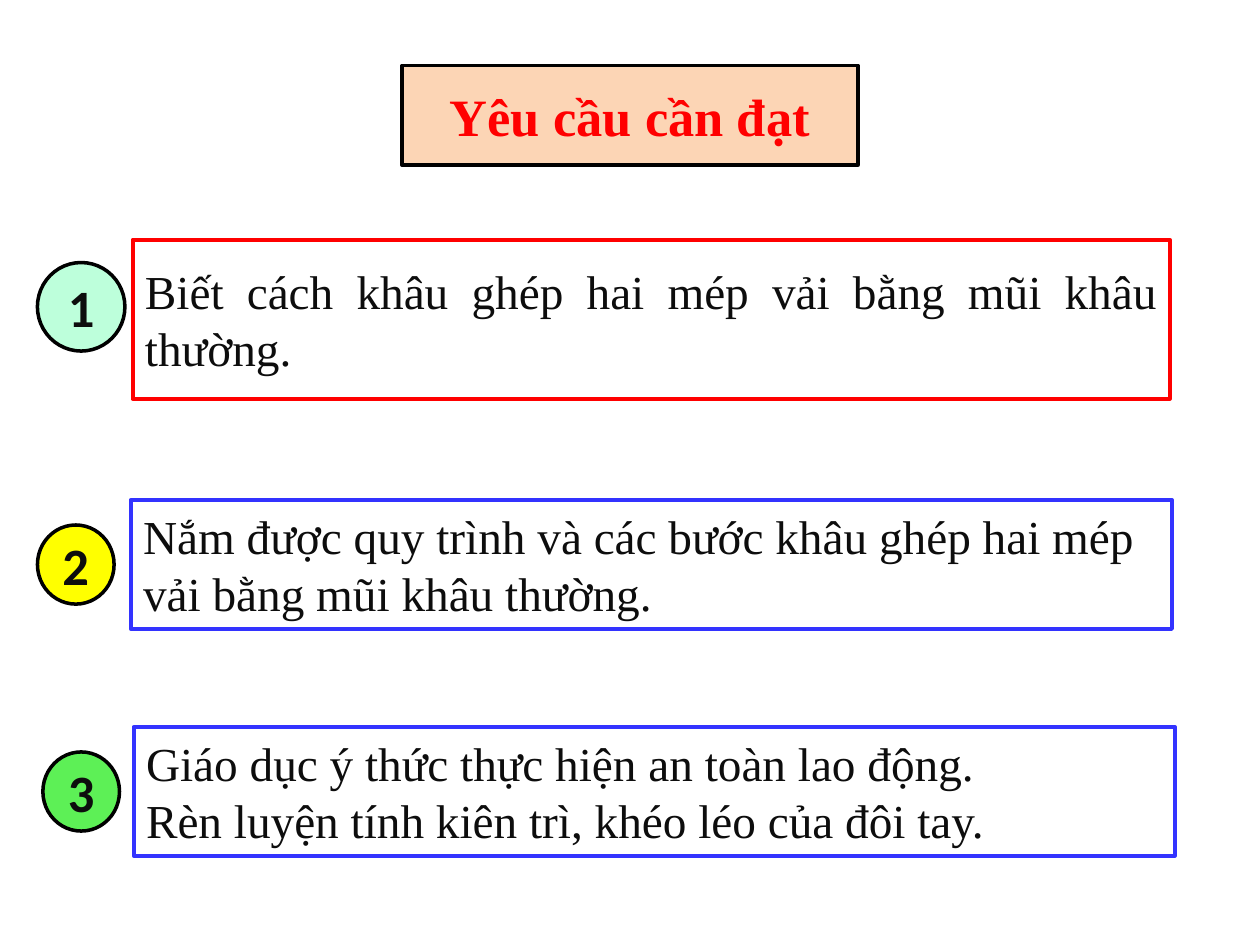
import pptx
import pptx.util
import pptx.dml.color
import pptx.enum.shapes
import pptx.enum.text
import pptx.oxml
import pptx.oxml.ns

Pt = pptx.util.Pt
Shape = pptx.enum.shapes.MSO_SHAPE
Align = pptx.enum.text.PP_ALIGN
Anchor = pptx.enum.text.MSO_ANCHOR

HUES = {
    "peach": "FCD5B5", "mint": "BDFFDB", "yellow": "FFFF00", "green": "5DF056",
    "red": "FF0000", "blue": "3333FF", "black": "000000", "ink": "0D0D0D",
}


class Deck:
    """Holds the style and the current slide."""
    serif, sans = "Times New Roman", "Calibri"
    large, body = 30, 27
    thin, thick = 2, 2.25

    def __init__(self, wide, high):
        self.prs = pptx.Presentation()
        self.prs.slide_width, self.prs.slide_height = Pt(wide), Pt(high)
        self.slide = self.prs.slides.add_slide(self.prs.slide_layouts[5])

    def hue(self, name):
        return pptx.dml.color.RGBColor.from_string(HUES[name])

    def paint(self, shape, fill, line, width):
        if fill:
            shape.fill.solid()
            shape.fill.fore_color.rgb = self.hue(fill)
        else:
            shape.fill.background()
        shape.line.color.rgb = self.hue(line)
        shape.line.width = Pt(width)

    def label(self, shape, lines, size, font, color, align, bold=False):
        frame = shape.text_frame
        frame.word_wrap = True
        frame.vertical_anchor = Anchor.MIDDLE
        for i, line in enumerate(lines):
            para = frame.add_paragraph() if i else frame.paragraphs[0]
            para.alignment = align
            run = para.add_run()
            run.text = line
            run.font.size, run.font.name = Pt(size), font
            run.font.bold = bold
            run.font.color.rgb = self.hue(color)

    def title(self, text, left, top, wide, high):
        shape = self.slide.shapes.title
        shape.left, shape.top = Pt(left), Pt(top)
        shape.width, shape.height = Pt(wide), Pt(high)
        # Rounded outline for the placeholder
        shape.element.spPr.append(pptx.oxml.parse_xml(
            f'<a:prstGeom {pptx.oxml.ns.nsdecls("a")} prst="roundRect"><a:avLst/></a:prstGeom>'))
        self.paint(shape, "peach", "black", self.thin)
        self.label(shape, [text], self.large, self.serif, "red", Align.CENTER, True)

    def group(self):
        return self.slide.shapes.add_group_shape().shapes

    def shape(self, home, kind, spot, fill, line, width):
        shape = home.add_shape(kind, *map(Pt, spot))
        shape.shadow.inherit = False
        self.paint(shape, fill, line, width)
        return shape

    def box(self, home, spot, line, lines, align):
        shape = self.shape(home, Shape.RECTANGLE, spot, None, line, self.thick)
        self.label(shape, lines, self.body, self.serif, "ink", align)

    def badge(self, home, spot, fill, text):
        shape = self.shape(home, Shape.OVAL, spot, fill, "black", self.thin)
        self.label(shape, [text], self.large, self.sans, "ink", Align.CENTER, True)


def main():
    deck = Deck(720, 540)

    # Heading
    deck.title("Yêu cầu cần đạt", 229.7, 37.4, 260.6, 56.9)

    # Goals: box place, line, alignment, text, badge place, badge fill
    goals = [
        ((75.8, 137, 592.6, 91), "red", Align.JUSTIFY,
         ["Biết cách khâu ghép hai mép vải bằng mũi khâu thường."],
         (21.4, 150, 50, 50.6), "mint"),
        ((74.7, 285.7, 595, 73.7), "blue", Align.LEFT,
         ["Nắm được quy trình và các bước khâu ghép hai mép vải bằng mũi khâu thường."],
         (21.4, 300, 43.8, 45.2), "yellow"),
        ((76.4, 415.4, 595, 73.7), "blue", Align.LEFT,
         ["Giáo dục ý thức thực hiện an toàn lao động.",
          "Rèn luyện tính kiên trì, khéo léo của đôi tay."],
         (24.5, 429.7, 43.8, 45.2), "green"),
    ]
    for num, (spot, line, align, lines, dot, fill) in enumerate(goals, 1):
        home = deck.group()
        deck.box(home, spot, line, lines, align)
        deck.badge(home, dot, fill, str(num))

    deck.prs.save("out.pptx")


if __name__ == "__main__":
    main()
